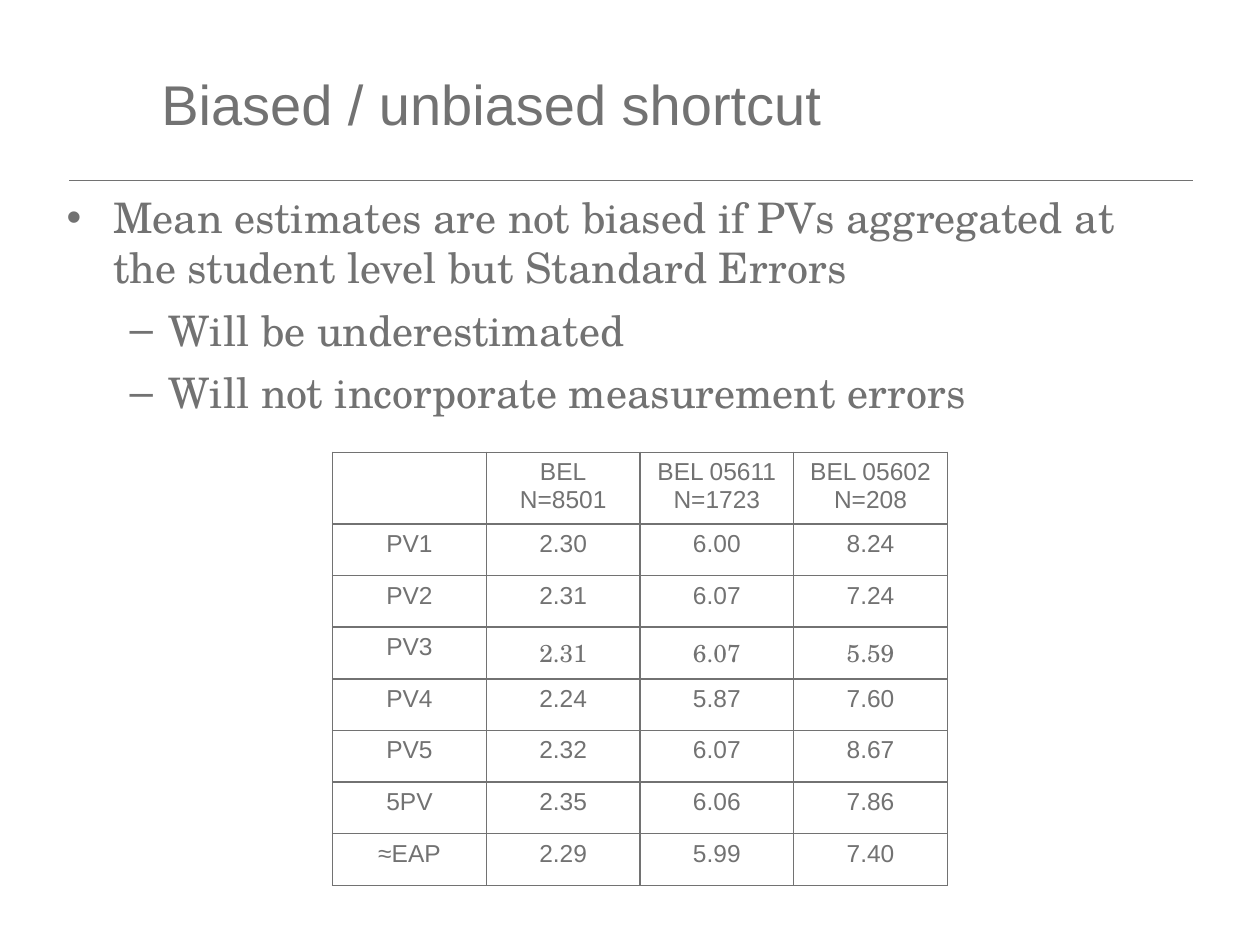
import pptx
import pptx.util
import pptx.dml.color
import pptx.enum.shapes
import pptx.enum.text
import pptx.oxml
import pptx.oxml.ns
from lxml import etree

Inches = pptx.util.Inches
Pt = pptx.util.Pt
ALIGN = pptx.enum.text.PP_ALIGN
ANCHOR = pptx.enum.text.MSO_ANCHOR
qn = pptx.oxml.ns.qn

GREY = pptx.dml.color.RGBColor(0x72, 0x72, 0x72)
SANS = "Arial"
SERIF = "TeX Gyre Schola"

BULLETS = [
    (0, "Mean estimates are not biased if PVs aggregated at the student level but Standard Errors"),
    (1, "Will be underestimated"),
    (1, "Will not incorporate measurement errors"),
]
BULLET_STYLES = [("•", 0.37, 0.37), ("–", 0.81, 0.31)]

STANDARD_ERRORS = [
    ("", "BEL\nN=8501", "BEL 05611\nN=1723", "BEL 05602\nN=208"),
    ("PV1", "2.30", "6.00", "8.24"),
    ("PV2", "2.31", "6.07", "7.24"),
    ("PV3", "2.31", "6.07", "5.59"),
    ("PV4", "2.24", "5.87", "7.60"),
    ("PV5", "2.32", "6.07", "8.67"),
    ("5PV", "2.35", "6.06", "7.86"),
    ("≈EAP", "2.29", "5.99", "7.40"),
]


def write_text(para, text, size, font=SANS, align=ALIGN.LEFT):
    para.alignment = align
    span = para.add_run()
    span.text = text
    span.font.size = Pt(size)
    span.font.name = font
    span.font.color.rgb = GREY


def set_bullet(para, mark, left, hanging):
    props = para._p.get_or_add_pPr()
    props.set("marL", str(Inches(left)))
    props.set("indent", str(-Inches(hanging)))
    colour = etree.SubElement(props, qn("a:buClr"))
    etree.SubElement(colour, qn("a:srgbClr"), val=str(GREY))
    etree.SubElement(props, qn("a:buFont"), typeface=SANS)
    etree.SubElement(props, qn("a:buChar"), char=mark)


def add_title(page, text):
    title = page.shapes.title
    title.left, title.top = Inches(1.18), Inches(0.26)
    title.width, title.height = Inches(8.11), Inches(1.12)
    title.text_frame.vertical_anchor = ANCHOR.MIDDLE
    write_text(title.text_frame.paragraphs[0], text, 32)


def add_rule(page):
    rule = page.shapes.add_connector(
        pptx.enum.shapes.MSO_CONNECTOR.STRAIGHT,
        Inches(0.55), Inches(1.43), Inches(9.47), Inches(1.43))
    rule.line.color.rgb = GREY
    rule.line.width = Pt(0.5)
    etree.SubElement(rule._element.spPr, qn("a:effectLst"))


def add_bullets(page, items):
    box = page.shapes.add_textbox(Inches(0.43), Inches(1.47), Inches(8.99), Inches(1.89))
    frame = box.text_frame
    frame.word_wrap = True
    for index, (level, text) in enumerate(items):
        para = frame.add_paragraph() if index else frame.paragraphs[0]
        set_bullet(para, *BULLET_STYLES[level])
        para.level = level
        if index:
            para.space_before = Pt(6.8)
        write_text(para, text, 24, SERIF)


def set_borders(cell):
    props = cell._tc.get_or_add_tcPr()
    for position, side in enumerate(("lnL", "lnR", "lnT", "lnB")):
        border = etree.Element(qn(f"a:{side}"), w=str(Pt(1)))
        fill = etree.SubElement(border, qn("a:solidFill"))
        etree.SubElement(fill, qn("a:srgbClr"), val=str(GREY))
        props.insert(position, border)


def fill_cell(cell, text, font):
    cell.fill.background()
    set_borders(cell)
    if font == SERIF:
        cell.vertical_anchor = ANCHOR.MIDDLE
    frame = cell.text_frame
    for index, line in enumerate(text.split("\n")):
        para = frame.add_paragraph() if index else frame.paragraphs[0]
        write_text(para, line, 14, font, ALIGN.CENTER)


def add_error_table(page, rows):
    table = page.shapes.add_table(
        len(rows), len(rows[0]), Inches(2.64), Inches(3.59), Inches(4.88), Inches(3.41)).table
    table.first_row = False
    table.horz_banding = False
    for row_index, values in enumerate(rows):
        table.rows[row_index].height = Inches(0.41 if row_index else 0.54)
        for column, text in enumerate(values):
            font = SERIF if values[0] == "PV3" and column else SANS
            fill_cell(table.cell(row_index, column), text, font)


def main():
    deck = pptx.Presentation()
    deck.slide_width, deck.slide_height = Inches(10), Inches(7.5)
    page = deck.slides.add_slide(deck.slide_layouts[5])
    add_rule(page)
    add_bullets(page, BULLETS)
    add_title(page, "Biased / unbiased shortcut")
    add_error_table(page, STANDARD_ERRORS)
    deck.save("out.pptx")


if __name__ == "__main__":
    main()
